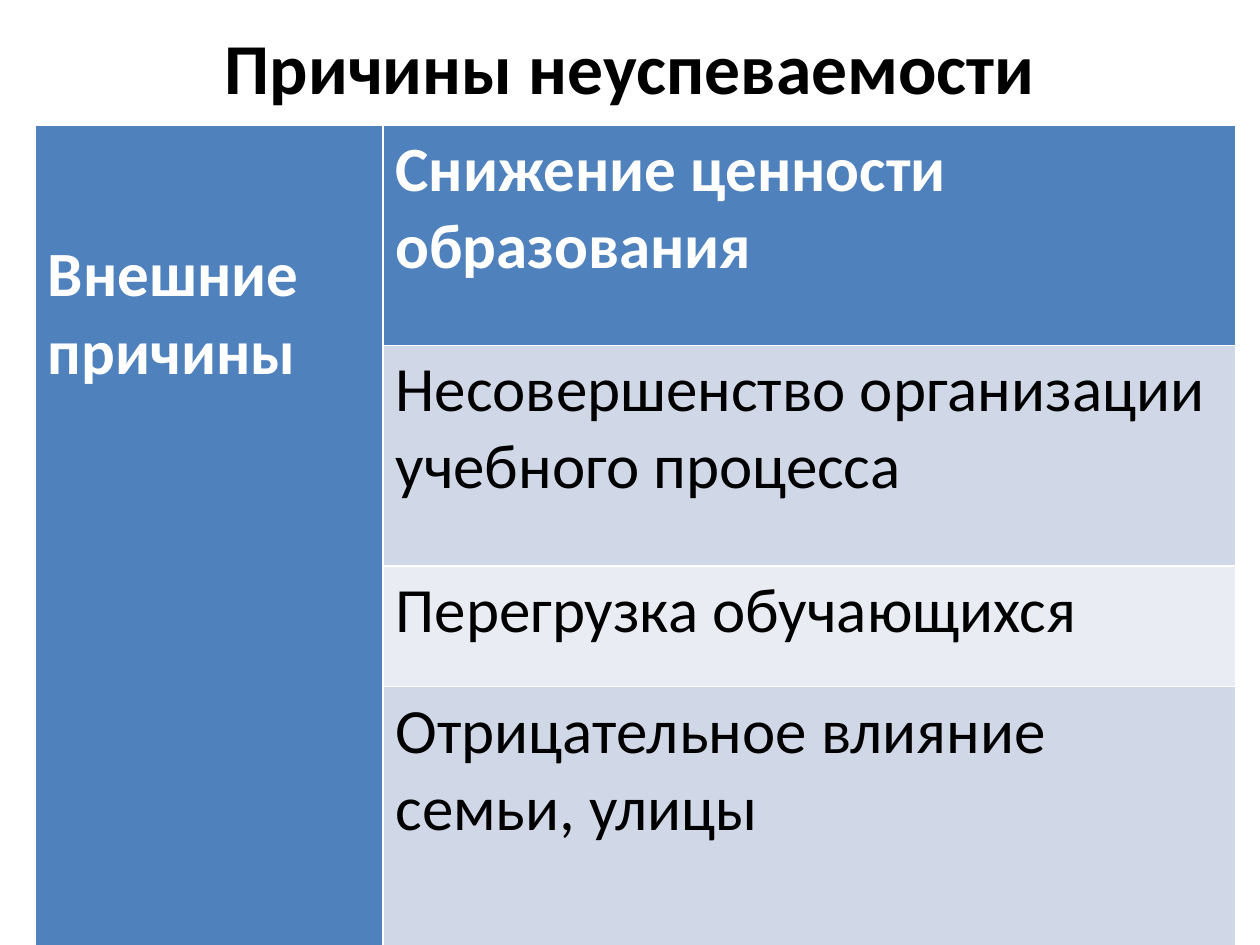
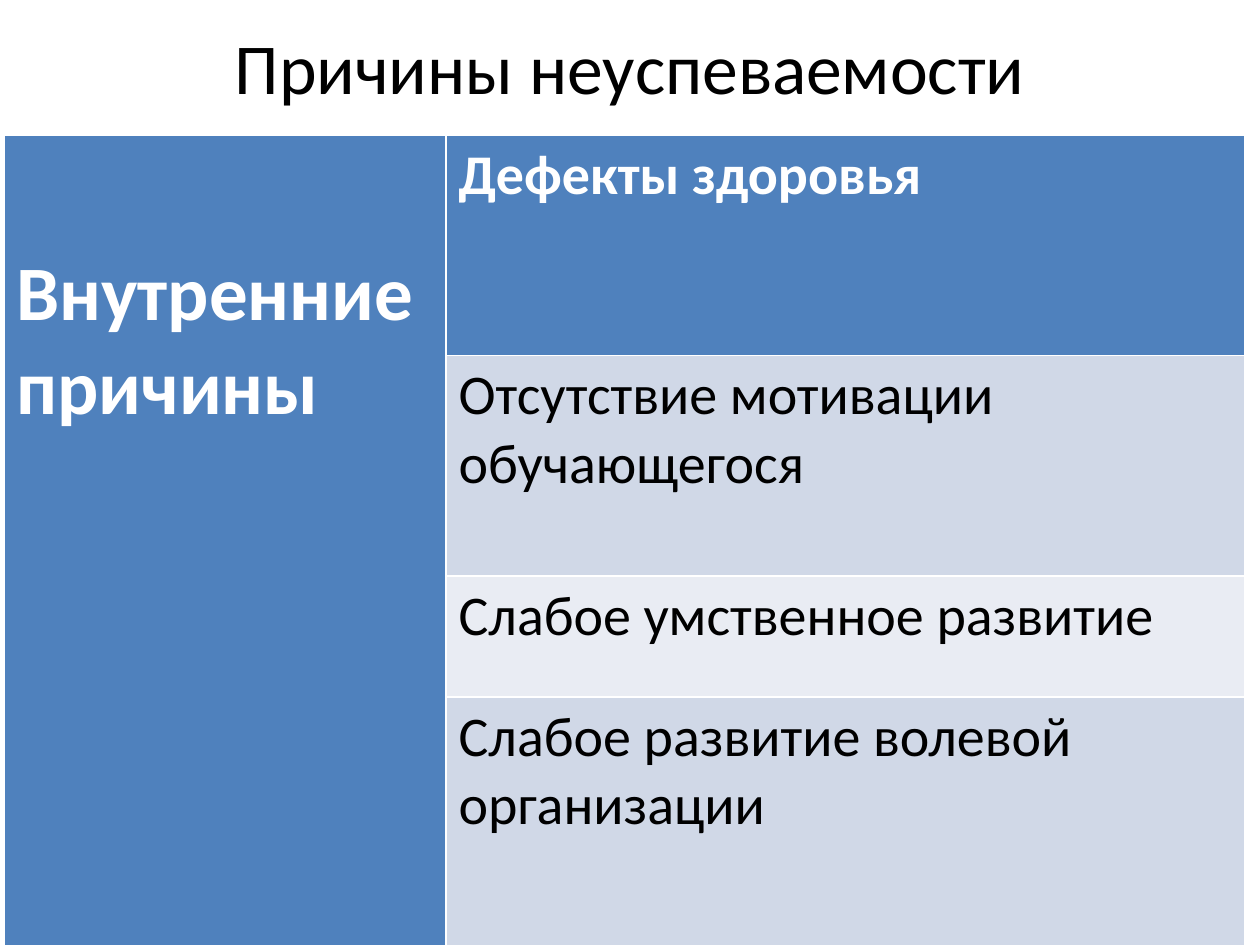
from pptx import Presentation
from pptx import util as u
from pptx.dml.color import RGBColor
from pptx.enum import text

BLUE = RGBColor(0x4F, 0x81, 0xBD)
DARK = RGBColor(0xD0, 0xD8, 0xE7)
PALE = RGBColor(0xE9, 0xEC, 0xF3)
WHITE = RGBColor(0xFF, 0xFF, 0xFF)
BLACK = RGBColor(0, 0, 0)
FACE = "Calibri"
TITLE = "Причины неуспеваемости"
TALL, LOW = 1.75, 0.96
FILLS = [BLUE, DARK, PALE, DARK]

PAGES = [
    {"bold": True, "left": 0.28, "top": 0.99, "cols": [2.76, 6.77],
     "group": "Внешние\nпричины", "big": 36, "size": 36,
     "causes": ["Снижение ценности образования",
                "Несовершенство организации учебного процесса",
                "Перегрузка обучающихся",
                "Отрицательное влияние семьи, улицы"]},
    {"bold": False, "left": 0.03, "top": 1.07, "cols": [3.51, 6.34],
     "group": "Внутренние причины", "big": 44, "size": 32,
     "causes": ["Дефекты здоровья",
                "Отсутствие мотивации обучающегося",
                "Слабое умственное развитие",
                "Слабое развитие волевой организации"]},
]


def write(frame, words, size, bold, color):
    frame.text = words
    form = {"name": FACE, "size": u.Pt(size), "bold": bold}
    for par in frame.paragraphs:
        for run in par.runs:
            for key, val in form.items():
                setattr(run.font, key, val)
            run.font.color.rgb = color


def paint(cell, color):
    cell.fill.solid()
    cell.fill.fore_color.rgb = color


prs = Presentation()
prs.slide_width, prs.slide_height = u.Inches(10), u.Inches(7.5)

for page in PAGES:
    slide = prs.slides.add_slide(prs.slide_layouts[5])

    head = slide.shapes.title
    place = {"left": 0.5, "top": 0.13, "width": 9, "height": 0.79}
    for key, val in place.items():
        setattr(head, key, u.Inches(val))
    write(head.text_frame, TITLE, 40.9, page["bold"], BLACK)
    head.text_frame.auto_size = text.MSO_AUTO_SIZE.NONE
    head.text_frame.vertical_anchor = text.MSO_ANCHOR.MIDDLE
    head.text_frame.paragraphs[0].alignment = text.PP_ALIGN.CENTER

    # The last row runs down to the foot of the slide.
    rows = [TALL, TALL, LOW]
    rows.append(7.5 - page["top"] - sum(rows))
    box = [page["left"], page["top"], sum(page["cols"]), sum(rows)]
    table = slide.shapes.add_table(4, 2, *map(u.Inches, box)).table
    for col, wide in zip(table.columns, page["cols"]):
        col.width = u.Inches(wide)
    for row, high in zip(table.rows, rows):
        row.height = u.Inches(high)

    group = table.cell(0, 0)
    group.merge(table.cell(3, 0))
    group.margin_top = u.Inches(0.89)
    paint(group, BLUE)
    write(group.text_frame, page["group"], page["big"], True, WHITE)

    for i, (cause, fill) in enumerate(zip(page["causes"], FILLS)):
        cell = table.cell(i, 1)
        paint(cell, fill)
        write(cell.text_frame, cause, page["size"], i == 0,
              BLACK if i else WHITE)

prs.save("out.pptx")
